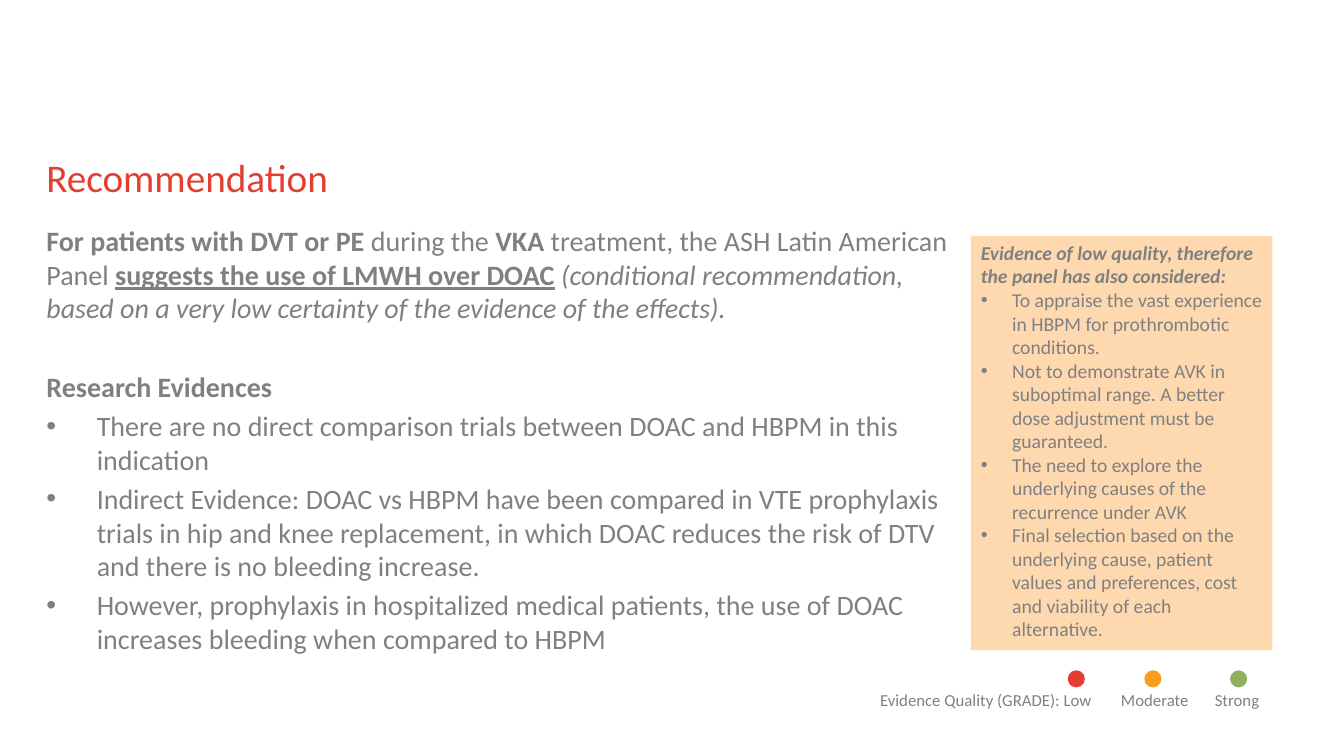
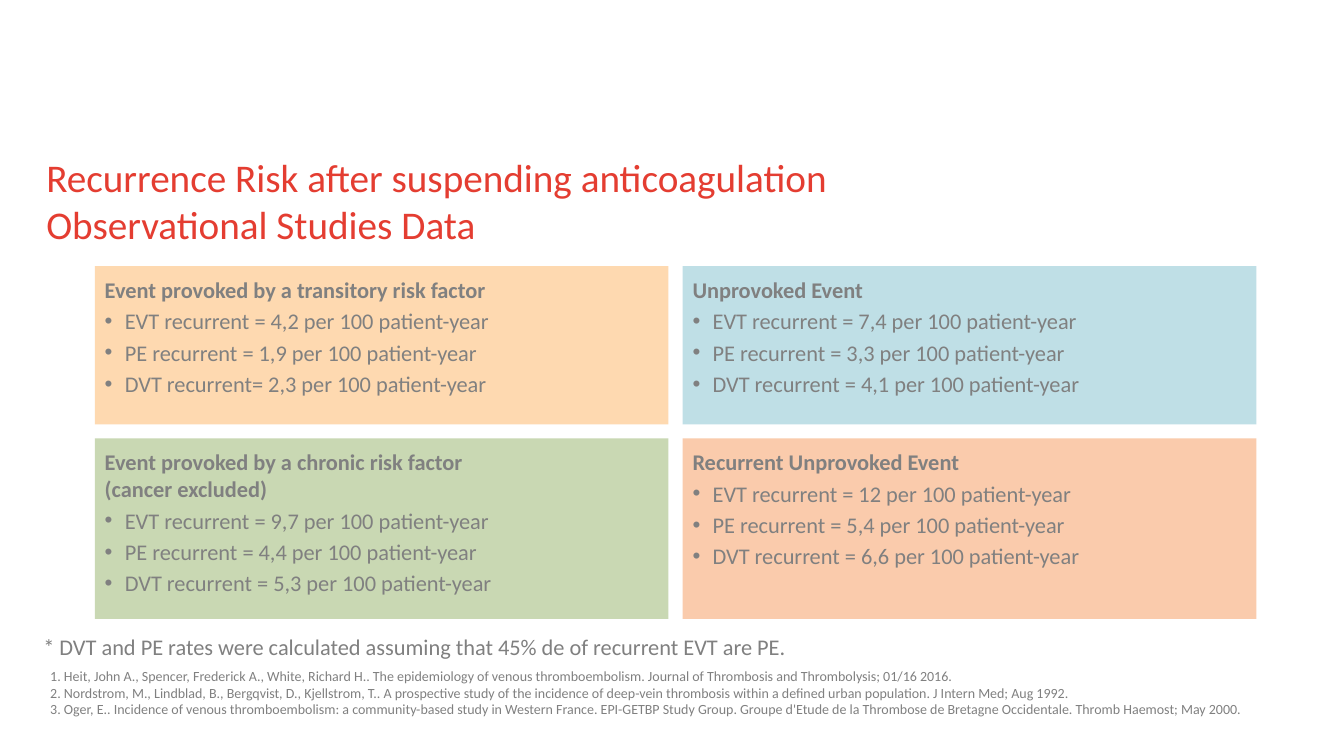
from lxml.etree import SubElement
from pptx import Presentation
from pptx.dml.color import RGBColor
from pptx.enum.shapes import MSO_SHAPE
from pptx.enum.text import MSO_ANCHOR, PP_ALIGN
from pptx.oxml.ns import qn
from pptx.util import Inches, Pt

FONT = "Calibri"
COLORS = {
    "title": "E43D31", "text": "808080",
    "low": "E43E32", "moderate": "F99D1C", "strong": "91AF5F",
    "peach": "FED9B0", "blue": "BFDFE6", "green": "C9D8B3", "salmon": "FACBAC",
}
PLAIN_INSETS = (0.1, 0.05, 0.1, 0.05)


def rgb(name):
    return RGBColor.from_string(COLORS[name])


# Shared text helpers
def add_run(paragraph, text, size, color="text", style=""):
    """Style letters: b bold, i italic, u underline."""
    for number, line in enumerate(text.split("\n")):
        if number:
            paragraph.add_line_break()
        run = paragraph.add_run()
        run.text = line
        font = run.font
        font.name, font.size = FONT, Pt(size)
        font.bold, font.italic, font.underline = (s in style for s in "biu")
        font.color.rgb = rgb(color)


def add_bullet(paragraph, indent):
    properties = paragraph._p.get_or_add_pPr()
    properties.set("marL", str(Inches(indent)))
    properties.set("indent", str(-Inches(indent)))
    SubElement(properties, qn("a:buFont")).set("typeface", "Arial")
    SubElement(properties, qn("a:buChar")).set("char", "•")


def add_tabs(paragraph, stops):
    tabs = SubElement(paragraph._p.get_or_add_pPr(), qn("a:tabLst"))
    for stop in stops:
        tab = SubElement(tabs, qn("a:tab"))
        tab.set("pos", str(Inches(stop)))
        tab.set("algn", "l")


def set_up_frame(shape, insets):
    frame = shape.text_frame
    frame.word_wrap = True
    frame.vertical_anchor = MSO_ANCHOR.TOP
    (frame.margin_left, frame.margin_top,
     frame.margin_right, frame.margin_bottom) = map(Inches, insets)
    return frame


def fill_frame(frame, paragraphs, size, color="text", gap=0):
    """Each paragraph is (runs, bullet indent, space before or None for gap)."""
    for number, (runs, indent, before) in enumerate(paragraphs):
        paragraph = frame.add_paragraph() if number else frame.paragraphs[0]
        paragraph.alignment = PP_ALIGN.LEFT
        if indent:
            add_bullet(paragraph, indent)
        if number:
            paragraph.space_before = Pt(gap if before is None else before)
        for text, style in runs:
            add_run(paragraph, text, size, color, style)


def line(text, style="", indent=0, before=None):
    return [(text, style)], indent, before


def add_text(parent, box, paragraphs, size, insets=PLAIN_INSETS, **options):
    frame = set_up_frame(parent.add_textbox(*map(Inches, box)), insets)
    fill_frame(frame, paragraphs, size, **options)
    return frame


def add_filled(parent, kind, box, color):
    shape = parent.add_shape(kind, *map(Inches, box))
    shape.shadow.inherit = False
    shape.fill.solid()
    shape.fill.fore_color.rgb = rgb(color)
    shape.line.fill.background()
    return shape


def add_panel(slide, box, color, heading, items, size, indent,
              style="b", insets=PLAIN_INSETS, gap=0):
    panel = add_filled(slide.shapes, MSO_SHAPE.RECTANGLE, box, color)
    paragraphs = [line(heading, style)] + [line(i, indent=indent) for i in items]
    fill_frame(set_up_frame(panel, insets), paragraphs, size, gap=gap)


def add_titled_slide(deck, title):
    slide = deck.slides.add_slide(deck.slide_layouts[6])
    add_text(slide.shapes, (0.46, 1.47, 12, 0.78), [line(title)], 28,
             insets=(0, 0.05, 0.1, 0.05), color="title")
    return slide


# Evidence grade legend
def add_grade_legend(slide, left, top):
    legend = slide.shapes.add_group_shape().shapes
    frame = add_text(legend, (left, top + 0.14, 4.6, 0.3), [], 12)
    labels = frame.paragraphs[0]
    add_tabs(labels, (2.39, 3.32))
    add_run(labels, "Evidence Quality (GRADE): Low\tModerate\tStrong", 12)
    for grade, offset in (("low", 1.96), ("moderate", 2.72), ("strong", 3.57)):
        add_filled(legend, MSO_SHAPE.OVAL, (left + offset, top, 0.17, 0.17), grade)


def build_recommendation(deck):
    slide = add_titled_slide(deck, "Recommendation")

    # Recommendation and research evidence
    recommendation = [
        ("For patients with DVT or PE ", "b"),
        ("during the ", ""),
        ("VKA ", "b"),
        ("treatment, the ASH Latin American Panel ", ""),
        ("suggests the use of LMWH over DOAC", "bu"),
        (" ", ""),
        ("(conditional recommendation, based on a very low certainty of the "
         "evidence of the effects).", "i"),
    ]
    evidence = [
        "There are no direct comparison trials between DOAC and HBPM in this indication",
        "Indirect Evidence: DOAC vs HBPM have been compared in VTE prophylaxis "
        "trials in hip and knee replacement, in which DOAC reduces the risk of DTV "
        "and there is no bleeding increase.",
        "However, prophylaxis in hospitalized medical patients, the use of DOAC "
        "increases bleeding when compared to HBPM",
    ]
    body = [(recommendation, 0, None), line("Research Evidences", "b", before=32)]
    body += [line(item, indent=0.5) for item in evidence]
    add_text(slide.shapes, (0.46, 2.22, 8.98, 4.3), body, 20,
             insets=(0, 0, 0, 0), gap=4)

    # Panel considerations
    considerations = [
        "To appraise the vast experience in HBPM for prothrombotic conditions.",
        "Not to demonstrate AVK in suboptimal range. A better dose adjustment "
        "must be guaranteed.",
        "The need to explore the underlying causes of the recurrence under AVK",
        "Final selection based on the underlying cause, patient values and "
        "preferences, cost and viability of each alternative.",
    ]
    add_panel(slide, (9.63, 2.34, 2.99, 4.11), "peach",
              "Evidence of low quality, therefore the panel has also considered:",
              considerations, 14, 0.31, style="bi")
    add_grade_legend(slide, 8.63, 6.65)


# Two by two grid of risk groups
def add_risk_grid(slide, left, top, groups):
    width, gap, heights = 5.69, 0.14, (1.57, 1.79)
    for number, (color, heading, rates) in enumerate(groups):
        row, column = divmod(number, 2)
        box = (left + column * (width + gap),
               top + sum(heights[:row]) + row * gap, width, heights[row])
        items = [f"{rate} per 100 patient-year" for rate in rates]
        add_panel(slide, box, color, heading, items, 16, 0.2,
                  insets=(0.1,) * 4, gap=3.2)


def build_recurrence_risk(deck):
    slide = add_titled_slide(
        deck, "Recurrence Risk after suspending anticoagulation\nObservational Studies Data")
    add_risk_grid(slide, 0.94, 2.64, [
        ("peach", "Event provoked by a transitory risk factor",
         ("EVT recurrent = 4,2", "PE recurrent = 1,9", "DVT recurrent= 2,3")),
        ("blue", "Unprovoked Event",
         ("EVT recurrent = 7,4", "PE recurrent = 3,3", "DVT recurrent = 4,1")),
        ("green", "Event provoked by a chronic risk factor\n(cancer excluded)",
         ("EVT recurrent = 9,7", "PE recurrent = 4,4", "DVT recurrent = 5,3")),
        ("salmon", "Recurrent Unprovoked Event",
         ("EVT recurrent = 12", "PE recurrent = 5,4", "DVT recurrent = 6,6")),
    ])

    # Footnote and references
    footnote = ("* DVT and PE rates were calculated assuming that 45% de of "
                "recurrent EVT are PE.")
    add_text(slide.shapes, (0.43, 6.28, 11.55, 0.3), [line(footnote)], 16,
             insets=(0, 0, 0, 0))
    references = [
        "1. Heit, John A., Spencer, Frederick A., White, Richard H.. The epidemiology "
        "of venous thromboembolism. Journal of Thrombosis and Thrombolysis; 01/16 2016.",
        "2. Nordstrom, M., Lindblad, B., Bergqvist, D., Kjellstrom, T.. A prospective "
        "study of the incidence of deep-vein thrombosis within a defined urban "
        "population. J Intern Med; Aug 1992.",
        "3. Oger, E.. Incidence of venous thromboembolism: a community-based study in "
        "Western France. EPI-GETBP Study Group. Groupe d'Etude de la Thrombose de "
        "Bretagne Occidentale. Thromb Haemost; May 2000.",
    ]
    add_text(slide.shapes, (0.4, 6.57, 12.8, 0.61), [line(r) for r in references], 10)


def main():
    deck = Presentation()
    deck.slide_width, deck.slide_height = Inches(13.33), Inches(7.5)
    build_recommendation(deck)
    build_recurrence_risk(deck)
    deck.save("out.pptx")


if __name__ == "__main__":
    main()
